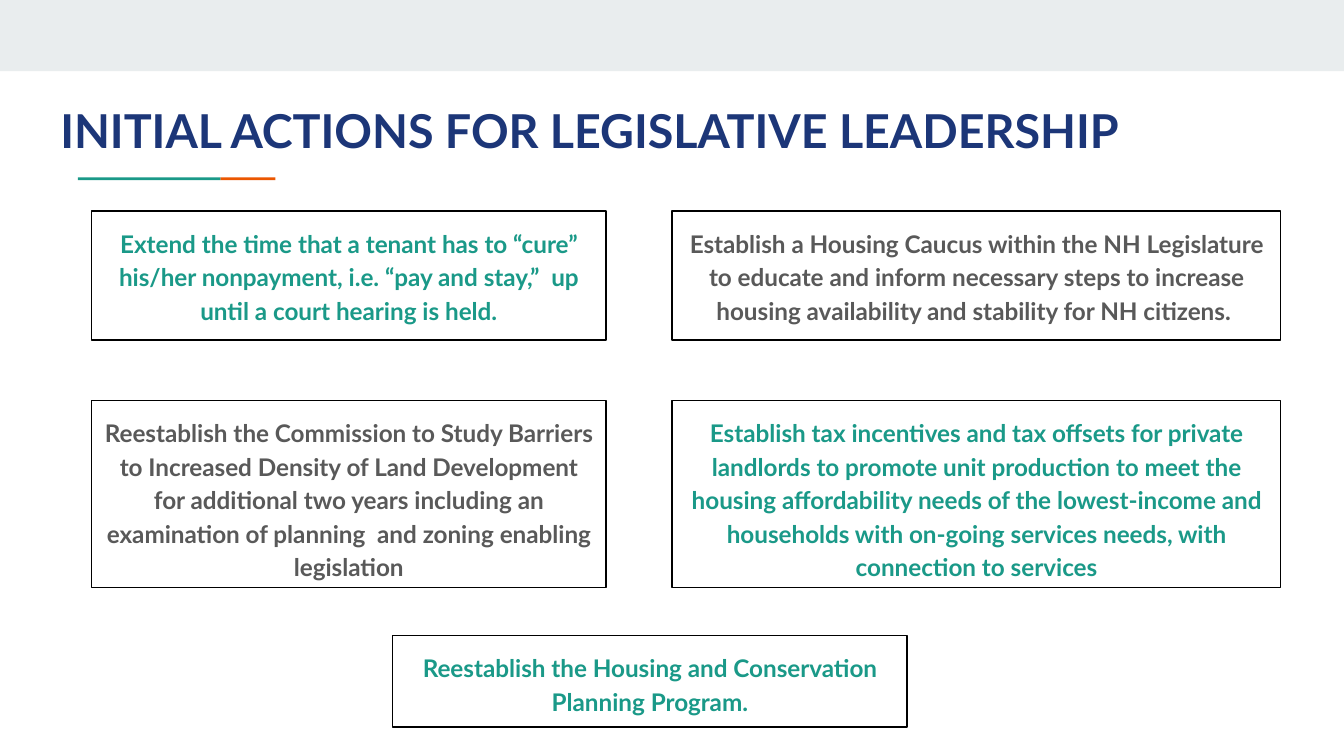
import pptx
import pptx.util
import pptx.dml.color
import pptx.enum.shapes
import pptx.enum.text

TEAL, ORANGE, NAVY, GREY = "1A9988", "EB5600", "1C3678", "595959"
BAND, BLACK = "E9EDEE", "000000"
FONT = "Lato"
WIDTH = 10
HEIGHT = WIDTH * 9 / 16

# Grid of the action boxes, in inches: (start, size)
COLS = {"left": (0.68, 3.83), "right": (5, 4.53), "middle": (2.92, 3.83)}
ROWS = [(1.57, 0.96), (2.98, 1.39), (4.73, 0.68)]

ACTIONS = [
    ("right", 0, GREY, "Establish a Housing Caucus within the NH Legislature to educate and "
     "inform necessary steps to increase housing availability and stability for NH citizens. "),
    ("left", 0, TEAL, "Extend the time that a tenant has to “cure” his/her nonpayment, "
     "i.e. “pay and stay,”  up until a court hearing is held."),
    ("middle", 2, TEAL, "Reestablish the Housing and Conservation Planning Program."),
    ("left", 1, GREY, "Reestablish the Commission to Study Barriers to Increased Density of "
     "Land Development for additional two years including an examination of planning  and "
     "zoning enabling legislation"),
    ("right", 1, TEAL, "Establish tax incentives and tax offsets for private landlords to "
     "promote unit production to meet the housing affordability needs of the lowest-income "
     "and households with on-going services needs, with connection to services"),
]


def rgb(code):
    return pptx.dml.color.RGBColor.from_string(code)


def inches(*values):
    return [pptx.util.Inches(v) for v in values]


def write(sp, text, size, color):
    """Put one bold paragraph at the top of a shape and return it."""
    tf = sp.text_frame
    tf.word_wrap = True
    tf.vertical_anchor = pptx.enum.text.MSO_ANCHOR.TOP
    tf.margin_left = tf.margin_right = tf.margin_top = tf.margin_bottom = pptx.util.Inches(0.1)
    p = tf.paragraphs[0]
    p.text = text
    f = p.runs[0].font
    f.name, f.size, f.bold = FONT, pptx.util.Pt(size), True
    f.color.rgb = rgb(color)
    return p


def add_rect(s, x, y, w, h):
    sp = s.shapes.add_shape(pptx.enum.shapes.MSO_SHAPE.RECTANGLE, *inches(x, y, w, h))
    sp.shadow.inherit = False
    return sp


def add_bar(s, x, y, w, h, color):
    sp = add_rect(s, x, y, w, h)
    sp.fill.solid()
    sp.fill.fore_color.rgb = rgb(color)
    sp.line.fill.background()


def add_title(s, text):
    sp = s.shapes.add_textbox(*inches(0.35, 0.66, 8.41, 0.59))
    write(sp, text, 25, NAVY)


def add_action(s, col, row, color, text):
    (x, w), (y, h) = COLS[col], ROWS[row]
    sp = add_rect(s, x, y, w, h)
    sp.fill.background()
    sp.line.color.rgb = rgb(BLACK)
    sp.line.width = pptx.util.Pt(0.75)
    p = write(sp, text, 13, color)
    p.alignment = pptx.enum.text.PP_ALIGN.CENTER
    p.line_spacing = 1.15


def main():
    prs = pptx.Presentation()
    prs.slide_width, prs.slide_height = inches(WIDTH, HEIGHT)
    s = prs.slides.add_slide(prs.slide_layouts[6])
    add_bar(s, 0, 0, WIDTH, 0.53, BAND)
    add_bar(s, 1.64, 1.32, 0.41, 0.02, ORANGE)
    add_bar(s, 0.58, 1.32, 1.06, 0.02, TEAL)
    add_title(s, "INITIAL ACTIONS FOR LEGISLATIVE LEADERSHIP")
    for action in ACTIONS:
        add_action(s, *action)
    prs.save("out.pptx")


if __name__ == "__main__":
    main()
